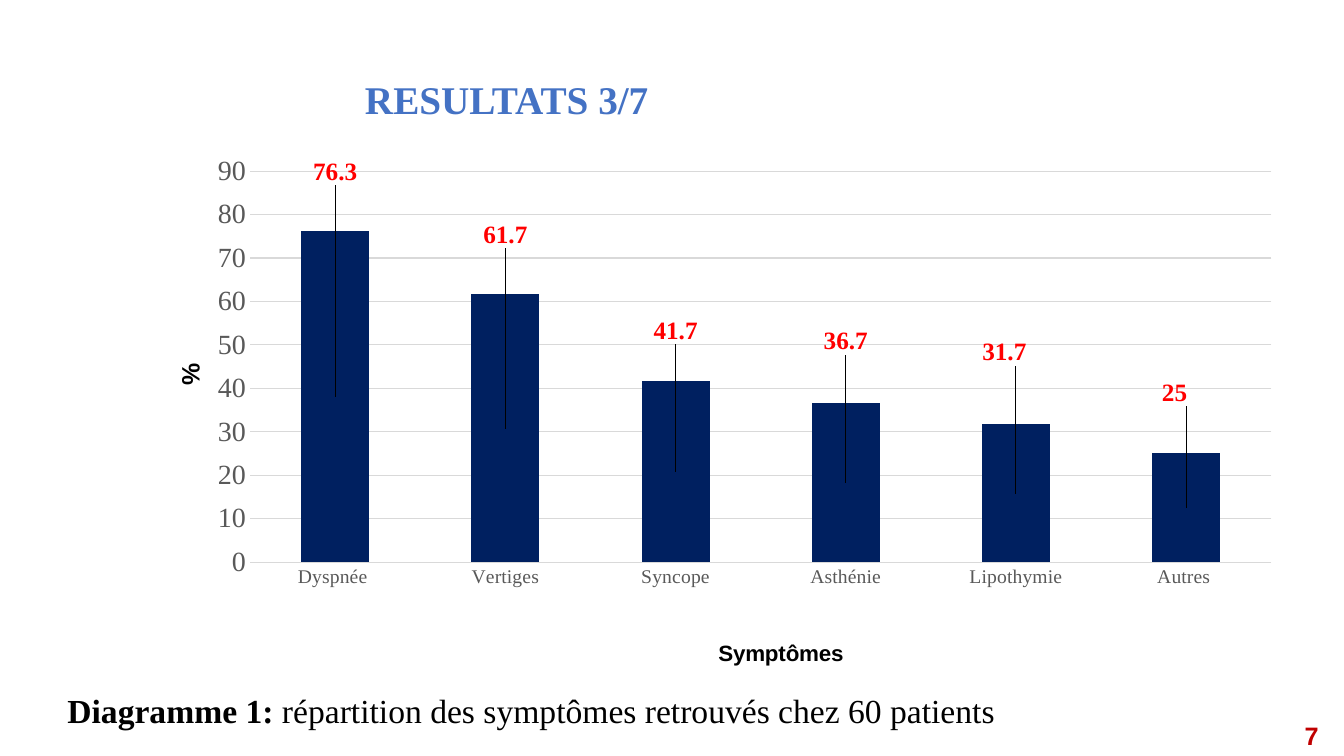
from dataclasses import dataclass

from lxml import etree
from pptx import Presentation
from pptx.chart import data as chart_data
from pptx.dml.color import RGBColor
from pptx.enum import chart as chart_enum, text
from pptx.oxml.ns import qn
from pptx.util import Inches, Pt

NAVY = RGBColor(0x00, 0x20, 0x60)
BLUE = RGBColor(0x44, 0x72, 0xC4)
RED = RGBColor(0xFF, 0x00, 0x00)
DARK_RED = RGBColor(0xC0, 0x00, 0x00)
BLACK = RGBColor(0x00, 0x00, 0x00)
GREY = RGBColor(0x59, 0x59, 0x59)
LIGHT_GREY = RGBColor(0xD9, 0xD9, 0xD9)
SERIF, SANS = "Times New Roman", "Arial"


@dataclass(frozen=True)
class Symptom:
    name: str
    percent: float
    label_x: float
    label_y: float


@dataclass(frozen=True)
class AxisStyle:
    title: str
    title_size: int
    title_x: float
    title_y: float
    label_size: int


SYMPTOMS = [
    Symptom("Dyspnée ", 76.3, 0, -0.43),
    Symptom("Vertiges", 61.7, 0, -0.37),
    Symptom("Syncope", 41.7, 0, -0.27),
    Symptom("Asthénie", 36.7, 0, -0.27),
    Symptom("Lipothymie", 31.7, -0.01, -0.27),
    Symptom("Autres ", 25, -0.01, -0.22),
]
CATEGORY_STYLE = AxisStyle("Symptômes", 16, 0.5, 0.94, 14)
VALUE_STYLE = AxisStyle("%", 18, 0.03, 0.41, 20)


def style_font(font, name: str, size: int, color: RGBColor, bold: bool = False) -> None:
    font.name = name
    font.size = Pt(size)
    font.bold = bold
    font.color.rgb = color


def add_span(para, wording: str, name: str, size: int, color: RGBColor, bold: bool = True) -> None:
    span = para.add_run()
    span.text = wording
    style_font(span.font, name, size, color, bold)


def set_layout(parent, index: int, **settings: float | str) -> None:
    for old in parent.findall(qn("c:layout")):
        parent.remove(old)
    layout = etree.Element(qn("c:layout"))
    manual = etree.SubElement(layout, qn("c:manualLayout"))
    for key, value in settings.items():
        etree.SubElement(manual, qn(f"c:{key}")).set("val", str(value))
    parent.insert(index, layout)


def style_axis(axis, style: AxisStyle) -> None:
    axis.major_tick_mark = axis.minor_tick_mark = chart_enum.XL_TICK_MARK.NONE
    style_font(axis.tick_labels.font, SERIF, style.label_size, GREY)
    frame = axis.axis_title.text_frame
    add_span(frame.paragraphs[0], style.title, SANS, style.title_size, BLACK)
    set_layout(axis.axis_title._element, 1, xMode="edge", yMode="edge",
               x=style.title_x, y=style.title_y)


def add_symptom_chart(page) -> None:
    table = chart_data.CategoryChartData()
    table.categories = [symptom.name for symptom in SYMPTOMS]
    table.add_series("Series 1", [symptom.percent for symptom in SYMPTOMS])
    chart = page.shapes.add_chart(
        chart_enum.XL_CHART_TYPE.COLUMN_STACKED,
        Inches(1.33), Inches(1.44), Inches(11.51), Inches(5.23), table).chart
    chart.has_title = chart.has_legend = False
    style_font(chart.font, SANS, 10, BLACK)

    plot = chart.plots[0]
    plot.gap_width, plot.overlap, plot.vary_by_categories = 150, 100, False
    set_layout(chart._chartSpace.find(".//" + qn("c:plotArea")), 0, layoutTarget="inner",
               xMode="edge", yMode="edge", x=0.1, y=0.05, w=0.88, h=0.75)

    style_axis(chart.category_axis, CATEGORY_STYLE)
    chart.category_axis.format.line.color.rgb = LIGHT_GREY
    chart.category_axis.format.line.width = Pt(0.75)

    values = chart.value_axis
    style_axis(values, VALUE_STYLE)
    values.axis_title.text_frame._txBody.bodyPr.set("rot", "-5400000")
    values.axis_title.text_frame._txBody.bodyPr.set("vert", "horz")
    values.minimum_scale, values.maximum_scale, values.major_unit = 0, 90, 10
    values.format.line.fill.background()
    values.major_gridlines.format.line.color.rgb = LIGHT_GREY
    values.major_gridlines.format.line.width = Pt(0.75)

    series = plot.series[0]
    series.format.fill.solid()
    series.format.fill.fore_color.rgb = NAVY
    labels = series.data_labels
    labels.show_value = True
    labels.position = chart_enum.XL_LABEL_POSITION.CENTER
    style_font(labels.font, SERIF, 18, RED, True)
    for index, symptom in enumerate(SYMPTOMS):
        label = series.points[index].data_label
        style_font(label.font, SERIF, 18, RED, True)
        label.position = chart_enum.XL_LABEL_POSITION.CENTER
        set_layout(labels._element.findall(qn("c:dLbl"))[index], 1,
                   x=symptom.label_x, y=symptom.label_y)


def add_title(page) -> None:
    title = page.shapes.title
    title.left, title.top = Inches(0.92), Inches(0.5)
    title.width, title.height = Inches(8.21), Inches(0.77)
    frame = title.text_frame
    frame.auto_size = text.MSO_AUTO_SIZE.NONE
    frame.vertical_anchor = text.MSO_ANCHOR.BOTTOM
    para = frame.paragraphs[0]
    para.alignment = text.PP_ALIGN.CENTER
    para.line_spacing = 0.9
    add_span(para, "RESULTATS 3/7", SERIF, 28, BLUE)


def add_caption(page) -> None:
    box = page.shapes.add_textbox(Inches(0.57), Inches(6.84), Inches(12.43), Inches(0.55))
    box.text_frame.word_wrap = True
    para = box.text_frame.paragraphs[0]
    para.line_spacing = 0.9
    para.space_before = Pt(10)
    add_span(para, "Diagramme 1:", SERIF, 24, BLACK)
    add_span(para, " répartition des symptômes retrouvés chez 60 patients", SERIF, 24, BLACK, False)


def add_page_number(page) -> None:
    box = page.shapes.add_textbox(Inches(12.84), Inches(7.1), Inches(0.34), Inches(0.4))
    box.text_frame.word_wrap = False
    box.text_frame.auto_size = text.MSO_AUTO_SIZE.SHAPE_TO_FIT_TEXT
    add_span(box.text_frame.paragraphs[0], "7", SANS, 18, DARK_RED)


def main() -> None:
    deck = Presentation()
    deck.slide_width, deck.slide_height = Inches(13.33), Inches(7.5)
    page = deck.slides.add_slide(deck.slide_layouts.get_by_name("Title Only"))
    add_title(page)
    add_caption(page)
    add_symptom_chart(page)
    add_page_number(page)
    deck.save("out.pptx")


if __name__ == "__main__":
    main()
